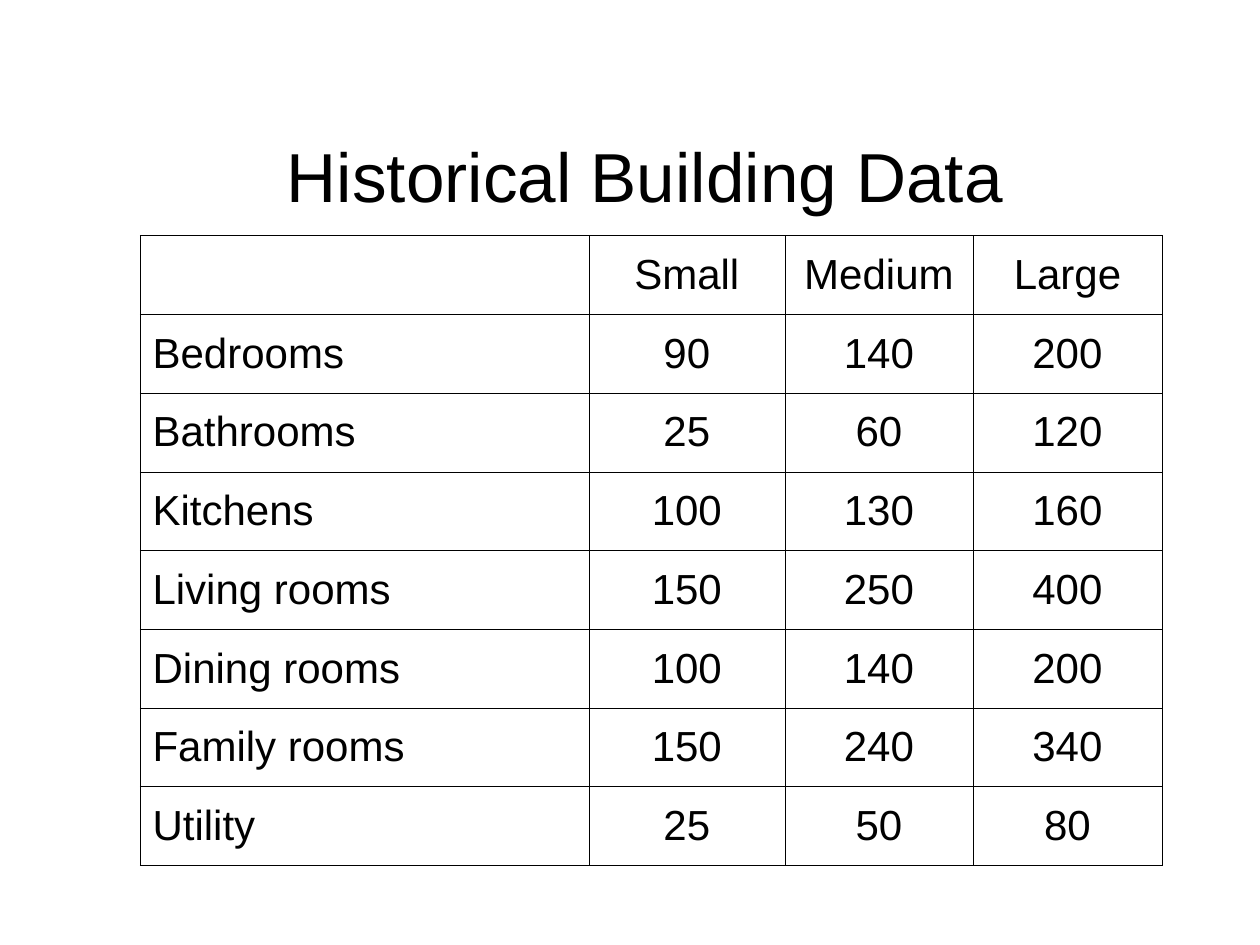
"""Build the slide with the table of historical building data."""
from lxml import etree
from pptx import Presentation
from pptx import util as u
from pptx.dml.color import RGBColor
from pptx.enum import text
from pptx.oxml.ns import qn

HEADING = "Historical Building Data"
ROOM_DATA = [
    ("", "Small", "Medium", "Large"),
    ("Bedrooms", 90, 140, 200),
    ("Bathrooms", 25, 60, 120),
    ("Kitchens", 100, 130, 160),
    ("Living rooms", 150, 250, 400),
    ("Dining rooms", 100, 140, 200),
    ("Family rooms", 150, 240, 340),
    ("Utility", 25, 50, 80),
]
COLORS = {"ink": "000000", "paper": "FFFFFF"}
FONT = "Arial"
HEADING_BOX = (76.3, 74.9, 584.6, 49.7)
TABLE_LEFT, TABLE_TOP, TABLE_HEIGHT = 80, 134.6, 360
COLUMN_WIDTHS = (256.5, 112, 107.5, 108)
BORDER_WIDTH = 0.25


def write(frame, words, size, align):
    paragraph = frame.paragraphs[0]
    paragraph.alignment = align
    run = paragraph.add_run()
    run.text = str(words)
    run.font.name = FONT
    run.font.size = u.Pt(size)
    run.font.color.rgb = RGBColor.from_string(COLORS["ink"])


def add_borders(cell):
    properties = cell._tc.get_or_add_tcPr()
    for side in ("lnL", "lnR", "lnT", "lnB"):
        line = etree.SubElement(properties, qn(f"a:{side}"), w=str(u.Pt(BORDER_WIDTH)))
        fill = etree.SubElement(line, qn("a:solidFill"))
        etree.SubElement(fill, qn("a:srgbClr"), val=COLORS["ink"])


def add_heading(slide):
    heading = slide.shapes.title
    heading.left, heading.top, heading.width, heading.height = map(u.Pt, HEADING_BOX)
    frame = heading.text_frame
    frame.auto_size = text.MSO_AUTO_SIZE.NONE
    frame.vertical_anchor = text.MSO_ANCHOR.MIDDLE
    frame.margin_top = frame.margin_bottom = 0
    write(frame, HEADING, 39.6, text.PP_ALIGN.CENTER)


def add_room_table(slide):
    rooms = slide.shapes.add_table(
        len(ROOM_DATA), len(COLUMN_WIDTHS), u.Pt(TABLE_LEFT), u.Pt(TABLE_TOP),
        u.Pt(sum(COLUMN_WIDTHS)), u.Pt(TABLE_HEIGHT)).table
    rooms.first_row = rooms.horz_banding = False
    for column, width in zip(rooms.columns, COLUMN_WIDTHS):
        column.width = u.Pt(width)
    for row, entries in enumerate(ROOM_DATA):
        rooms.rows[row].height = u.Pt(TABLE_HEIGHT / len(ROOM_DATA))
        for col, entry in enumerate(entries):
            cell = rooms.cell(row, col)
            cell.vertical_anchor = text.MSO_ANCHOR.MIDDLE
            add_borders(cell)
            cell.fill.solid()
            cell.fill.fore_color.rgb = RGBColor.from_string(COLORS["paper"])
            if entry != "":
                align = text.PP_ALIGN.CENTER if col else text.PP_ALIGN.LEFT
                write(cell.text_frame, entry, 24, align)


def main():
    deck = Presentation()
    deck.slide_width, deck.slide_height = u.Pt(720), u.Pt(540)
    slide = deck.slides.add_slide(deck.slide_layouts[5])
    add_heading(slide)
    add_room_table(slide)
    deck.save("out.pptx")


if __name__ == "__main__":
    main()
